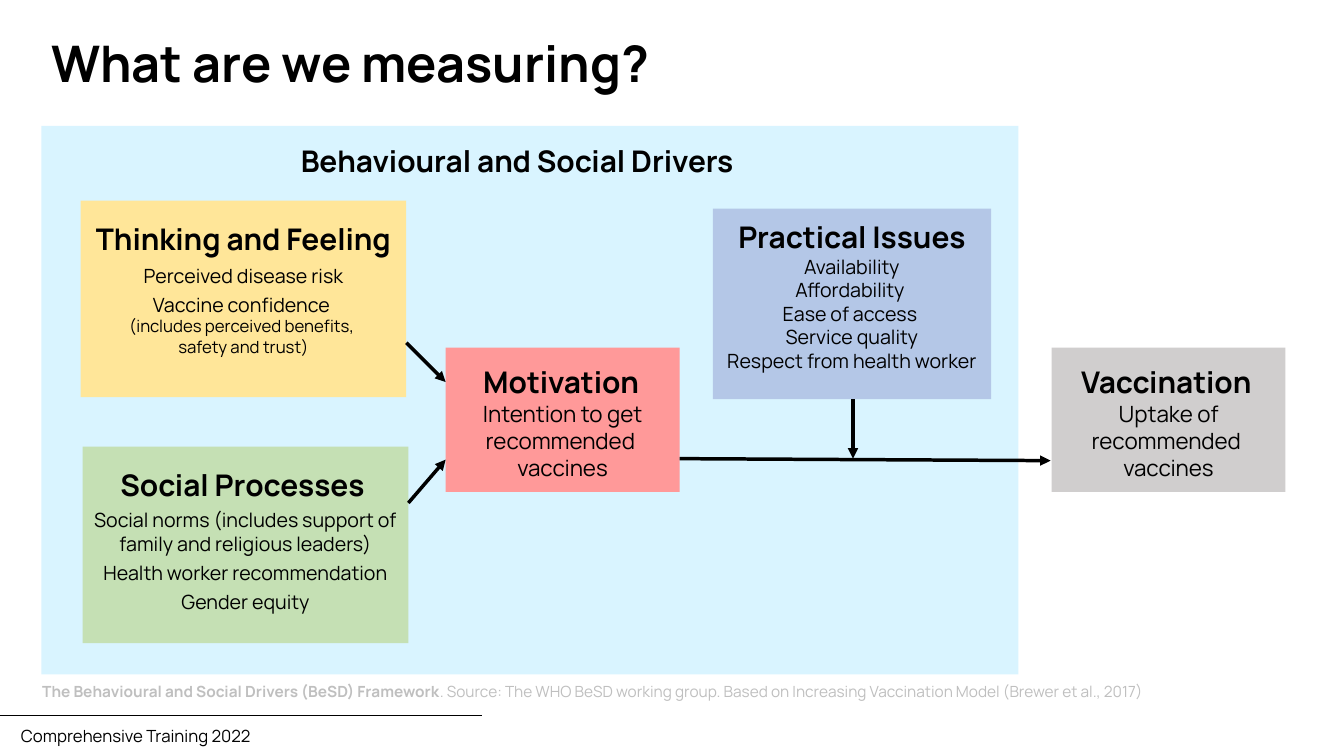
from lxml import etree
from pptx import Presentation
from pptx.dml.color import RGBColor
from pptx.enum.shapes import MSO_CONNECTOR, MSO_SHAPE
from pptx.enum.text import MSO_ANCHOR, MSO_AUTO_SIZE, PP_ALIGN
from pptx.oxml.ns import qn
from pptx.util import Inches, Pt

FONT = "Manrope"
BLACK = RGBColor(0x00, 0x00, 0x00)
SOURCE_GREY = RGBColor(0xBF, 0xBF, 0xBF)
PANEL_BLUE = RGBColor(0xD9, 0xF4, 0xFF)
YELLOW = RGBColor(0xFF, 0xE6, 0x99)
GREEN = RGBColor(0xC5, 0xE0, 0xB4)
RED = RGBColor(0xFF, 0x99, 0x99)
BLUE = RGBColor(0xB4, 0xC7, 0xE7)
GREY = RGBColor(0xD0, 0xCE, 0xCE)

HEADING, BODY, LARGE, SMALL = 21.3, 14, 16, 12


def add_run(p, text, size, bold=False, color=BLACK):
    """Add text to a paragraph; each newline becomes a line break of the same size."""
    for i, line in enumerate(text.split("\n")):
        if i:
            p.add_line_break()
            etree.SubElement(p._p[-1], qn("a:rPr"), sz=str(round(size * 100)))
        if line:
            r = p.add_run()
            r.text = line
            r.font.name = FONT
            r.font.size = Pt(size)
            r.font.bold = bold
            r.font.color.rgb = color


def fill_text(tf, paragraphs, align, gaps=()):
    """Each paragraph is a list of (text, size, bold, color) runs."""
    tf.word_wrap = True
    for i, runs in enumerate(paragraphs):
        p = tf.paragraphs[0] if i == 0 else tf.add_paragraph()
        p.alignment = align
        if i < len(gaps) and gaps[i]:
            p.space_before = Pt(gaps[i])
        for run in runs:
            add_run(p, *run)


def add_rect(slide, box, color):
    s = slide.shapes.add_shape(MSO_SHAPE.RECTANGLE, *map(Inches, box))
    s.shadow.inherit = False
    s.fill.solid()
    s.fill.fore_color.rgb = color
    s.line.fill.background()
    return s


def add_label(slide, box, runs, align=PP_ALIGN.LEFT, grow=True):
    tf = slide.shapes.add_textbox(*map(Inches, box)).text_frame
    fill_text(tf, [runs], align)
    tf.auto_size = MSO_AUTO_SIZE.SHAPE_TO_FIT_TEXT if grow else MSO_AUTO_SIZE.NONE
    return tf


def add_card(slide, box, color, paragraphs, insets, gaps=(), anchor=MSO_ANCHOR.TOP):
    tf = add_rect(slide, box, color).text_frame
    tf.margin_left, tf.margin_top, tf.margin_right, tf.margin_bottom = map(Inches, insets)
    tf.vertical_anchor = anchor
    fill_text(tf, paragraphs, PP_ALIGN.CENTER, gaps)


def add_line(slide, start, end, width, arrow=False):
    c = slide.shapes.add_connector(MSO_CONNECTOR.STRAIGHT, *map(Inches, start + end))
    c.line.color.rgb = BLACK
    c.line.width = Pt(width)
    if arrow:
        etree.SubElement(c.line._get_or_add_ln(), qn("a:tailEnd"), type="triangle")
    etree.SubElement(c._element.spPr, qn("a:effectLst"))


def add_footer(slide, left, top):
    add_label(slide, (left, top, 4.39, 0.3), [("Comprehensive Training 2022", SMALL)])
    add_line(slide, (left - 0.17, top - 0.05), (left + 4.67, top - 0.05), 0.5)


def add_drivers(slide, left, top, width, height):
    """Blue panel with the four groups of drivers, and the outcome to its right."""
    add_rect(slide, (left, top, width, height), PANEL_BLUE)

    # Causes on the left
    wide, tall = 3.23, 1.95
    think_x, think_y = left + 0.39, top + 0.74
    social_x, social_y = left + 0.41, top + 3.18
    add_card(slide, (think_x, think_y, wide, tall), YELLOW, [
        [("Thinking and Feeling", HEADING, True)],
        [("Perceived disease risk", BODY)],
        [("Vaccine confidence \n", BODY),
         ("(includes perceived benefits, \nsafety and trust)", SMALL)],
    ], (0.1, 0.2, 0.1, 0.05), gaps=(0, 5, 4))
    add_card(slide, (social_x, social_y, wide, tall), GREEN, [
        [("Social Processes ", HEADING, True)],
        [("Social norms (includes support of family and religious leaders)", BODY)],
        [("Health worker recommendation", BODY)],
        [("Gender equity", BODY)],
    ], (0, 0.2, 0, 0.05), gaps=(0, 4, 4, 4))

    # Motivation and the resulting vaccination
    mid_w, mid_h = 2.32, 1.43
    mid_y = top + 2.2
    motive_x, vaccine_x = left + 4.01, left + 10.02
    mid_insets = (0.1, 0.1, 0.1, 0.05)
    add_card(slide, (motive_x, mid_y, mid_w, mid_h), RED, [
        [("Motivation", HEADING, True), (" ", 10.1, True)],
        [("Intention to get\nrecommended ", LARGE)],
        [("vaccines", LARGE)],
    ], mid_insets, anchor=MSO_ANCHOR.MIDDLE)
    add_card(slide, (vaccine_x, mid_y, mid_w, mid_h), GREY, [
        [("Vaccination", HEADING, True), (" \nUptake of recommended ", LARGE)],
        [("vaccines", LARGE)],
    ], mid_insets, anchor=MSO_ANCHOR.MIDDLE)

    # Practical issues above the path to vaccination
    issues_x, issues_y, issues_w, issues_h = left + 6.66, top + 0.82, 2.76, 1.89
    issues = ["Availability", "Affordability ", "Ease of access ", "Service quality",
              "Respect from health worker"]
    add_card(slide, (issues_x, issues_y, issues_w, issues_h), BLUE,
             [[("Practical Issues", HEADING, True)]] + [[(t, BODY)] for t in issues],
             (0.1, 0.1, 0.1, 0.1))

    # Arrows between the cards
    path_y = mid_y + 1.1
    issues_mid = issues_x + issues_w / 2 + 0.01
    for start, end in [
        ((think_x + wide, mid_y - 0.05), (motive_x, mid_y + 0.34)),
        ((social_x + wide, social_y + 0.56), (motive_x, path_y + 0.01)),
        ((motive_x + mid_w, path_y), (vaccine_x - 0.01, path_y + 0.02)),
        ((issues_mid, issues_y + issues_h), (issues_mid, path_y)),
    ]:
        add_line(slide, start, end, 2.5, arrow=True)

    # Panel heading and source
    add_label(slide, (left, top + 0.12, 9.44, 0.46),
              [("Behavioural and Social Drivers", HEADING, True)], PP_ALIGN.CENTER)
    add_label(slide, (left - 0.09, top + height + 0.03, 12.84, 0.29), [
        ("The Behavioural and Social Drivers (BeSD) Framework", 11, True, SOURCE_GREY),
        (". Source: The WHO BeSD working group. Based on Increasing Vaccination Model "
         "(Brewer et al., 2017)", 11, False, SOURCE_GREY),
    ])


def add_title(slide, left, top):
    tf = add_label(slide, (left, top, 11.5, 0.85),
                   [("What are we measuring?", 36, True)], grow=False)
    tf.paragraphs[0].line_spacing = 0.9


def main():
    prs = Presentation()
    prs.slide_width, prs.slide_height = Inches(13.33), Inches(7.5)
    slide = prs.slides.add_slide(prs.slide_layouts[6])
    add_footer(slide, 0.11, 7.15)
    add_drivers(slide, 0.41, 1.25, 9.69, 5.44)
    add_title(slide, 0.41, 0.34)
    prs.save("out.pptx")


if __name__ == "__main__":
    main()
